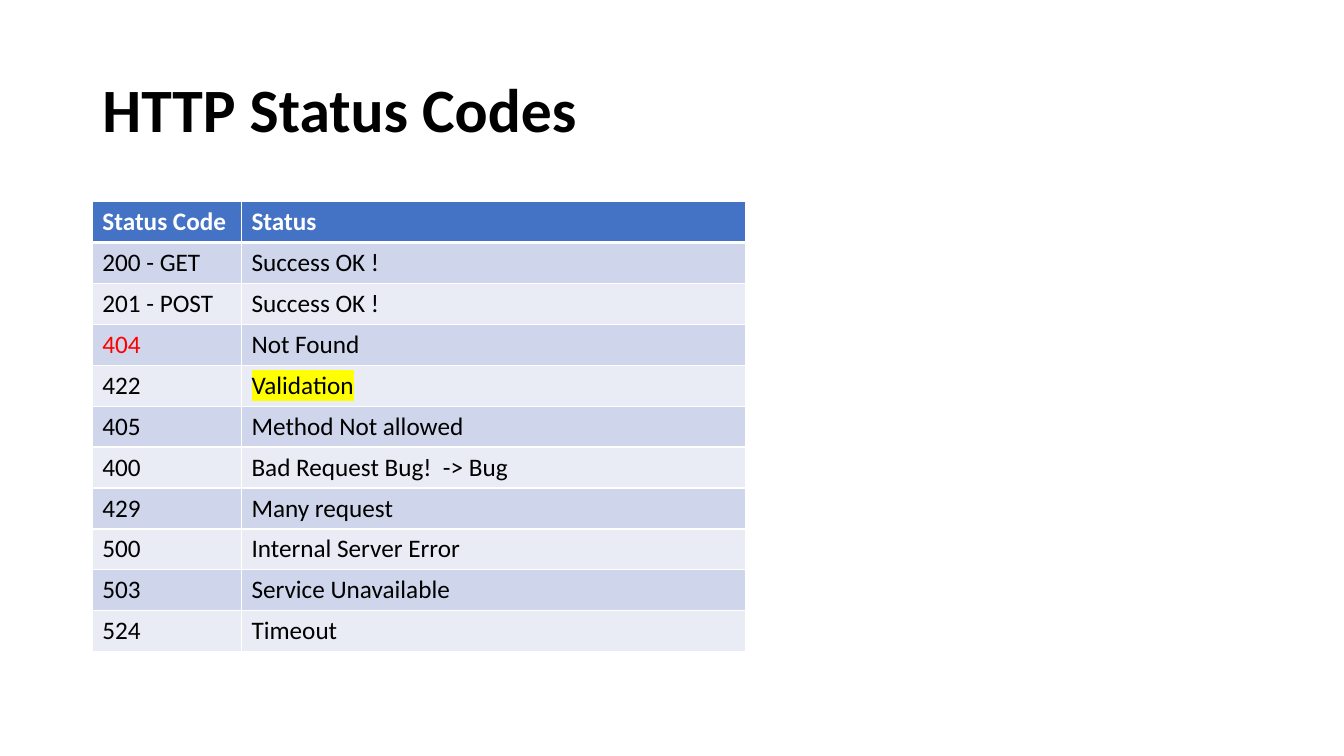
from dataclasses import dataclass

from lxml.etree import SubElement
from pptx import Presentation
from pptx.dml.color import RGBColor
from pptx.enum.text import MSO_ANCHOR as Anchor, MSO_AUTO_SIZE as AutoSize, PP_ALIGN as Align
from pptx.oxml.ns import qn
from pptx.oxml.xmlchemy import OxmlElement
from pptx.util import Pt

PX = 9525


@dataclass(frozen=True)
class Theme:
    """Colours, font and type sizes of the slide."""
    font: str = "Calibri"
    title_size: int = 44
    table_size: int = 18
    ink: str = "000000"
    paper: str = "FFFFFF"
    alert: str = "FF0000"
    marker: str = "FFFF00"
    header: str = "4472C4"
    bands: tuple = ("CFD5EA", "E9EBF5")


THEME = Theme()
COLUMN_WIDTHS = (142, 480)
ROW_HEIGHT = 39
HEADINGS = ("Status Code", "Status")
STATUS_CODES = (
    ("200 - GET", "Success OK !"),
    ("201 - POST", "Success OK !"),
    ("404", "Not Found"),
    ("422", "Validation"),
    ("405", "Method Not allowed"),
    ("400", "Bad Request Bug!  -> Bug"),
    ("429", "Many request"),
    ("500", "Internal Server Error"),
    ("503", "Service Unavailable"),
    ("524", "Timeout"),
)
TEXT_COLORS = {"404": THEME.alert}
HIGHLIGHTS = {"Validation": THEME.marker}


def add_run(paragraph, text, size, color, bold=False):
    """Add one formatted run to a paragraph."""
    run = paragraph.add_run()
    run.text = text
    run.font.name = THEME.font
    run.font.size = Pt(size)
    run.font.bold = bold
    run.font.color.rgb = RGBColor.from_string(color)
    return run


def highlight(run, color):
    """Put a marker colour behind a run."""
    mark = OxmlElement("a:highlight")
    SubElement(mark, qn("a:srgbClr"), val=color)
    run.font.fill
    run._r.rPr.find(qn("a:latin")).addprevious(mark)


def set_borders(cell, top, bottom):
    """Draw the cell borders, with top and bottom widths in points."""
    properties = cell._tc.get_or_add_tcPr()
    widths = {"a:lnL": 1, "a:lnR": 1, "a:lnT": top, "a:lnB": bottom}
    for position, (tag, width) in enumerate(widths.items()):
        line = OxmlElement(tag)
        line.set("w", str(Pt(width)))
        fill = SubElement(line, qn("a:solidFill"))
        SubElement(fill, qn("a:srgbClr"), val=THEME.paper)
        properties.insert(position, line)


def place_title(slide, text, left, top, width, height):
    """Fit the title placeholder into its box."""
    title = slide.shapes.title
    title.left, title.top = left * PX, top * PX
    title.width, title.height = width * PX, height * PX
    frame = title.text_frame
    frame.word_wrap = True
    frame.auto_size = AutoSize.NONE
    frame.vertical_anchor = Anchor.MIDDLE
    paragraph = frame.paragraphs[0]
    paragraph.alignment = Align.LEFT
    paragraph.line_spacing = 0.9
    add_run(paragraph, text, THEME.title_size, THEME.ink, bold=True)


def fill_cell(cell, text, row_index):
    """Fill one table cell according to its row."""
    is_header = row_index == 0
    background = THEME.header if is_header else THEME.bands[(row_index - 1) % 2]
    cell.fill.solid()
    cell.fill.fore_color.rgb = RGBColor.from_string(background)
    set_borders(cell, 3 if row_index == 1 else 1, 3 if is_header else 1)
    color = THEME.paper if is_header else TEXT_COLORS.get(text, THEME.ink)
    run = add_run(cell.text_frame.paragraphs[0], text, THEME.table_size, color, is_header)
    if text in HIGHLIGHTS:
        highlight(run, HIGHLIGHTS[text])


def add_status_table(slide, left, top):
    """Add the table of status codes from its top left corner."""
    rows = (HEADINGS, *STATUS_CODES)
    table = slide.shapes.add_table(
        len(rows), len(HEADINGS), left * PX, top * PX,
        sum(COLUMN_WIDTHS) * PX, len(rows) * ROW_HEIGHT * PX,
    ).table
    for column, width in zip(table.columns, COLUMN_WIDTHS):
        column.width = width * PX
    for row_index, texts in enumerate(rows):
        table.rows[row_index].height = ROW_HEIGHT * PX
        for column_index, text in enumerate(texts):
            fill_cell(table.cell(row_index, column_index), text, row_index)


def main():
    """Build and save the presentation."""
    presentation = Presentation()
    presentation.slide_width, presentation.slide_height = 1280 * PX, 720 * PX
    slide = presentation.slides.add_slide(presentation.slide_layouts[5])
    slide.background.fill.solid()
    slide.background.fill.fore_color.rgb = RGBColor.from_string(THEME.paper)
    place_title(slide, "HTTP Status Codes", 88, 38, 1104, 139)
    add_status_table(slide, 88, 192)
    presentation.save("out.pptx")


if __name__ == "__main__":
    main()
